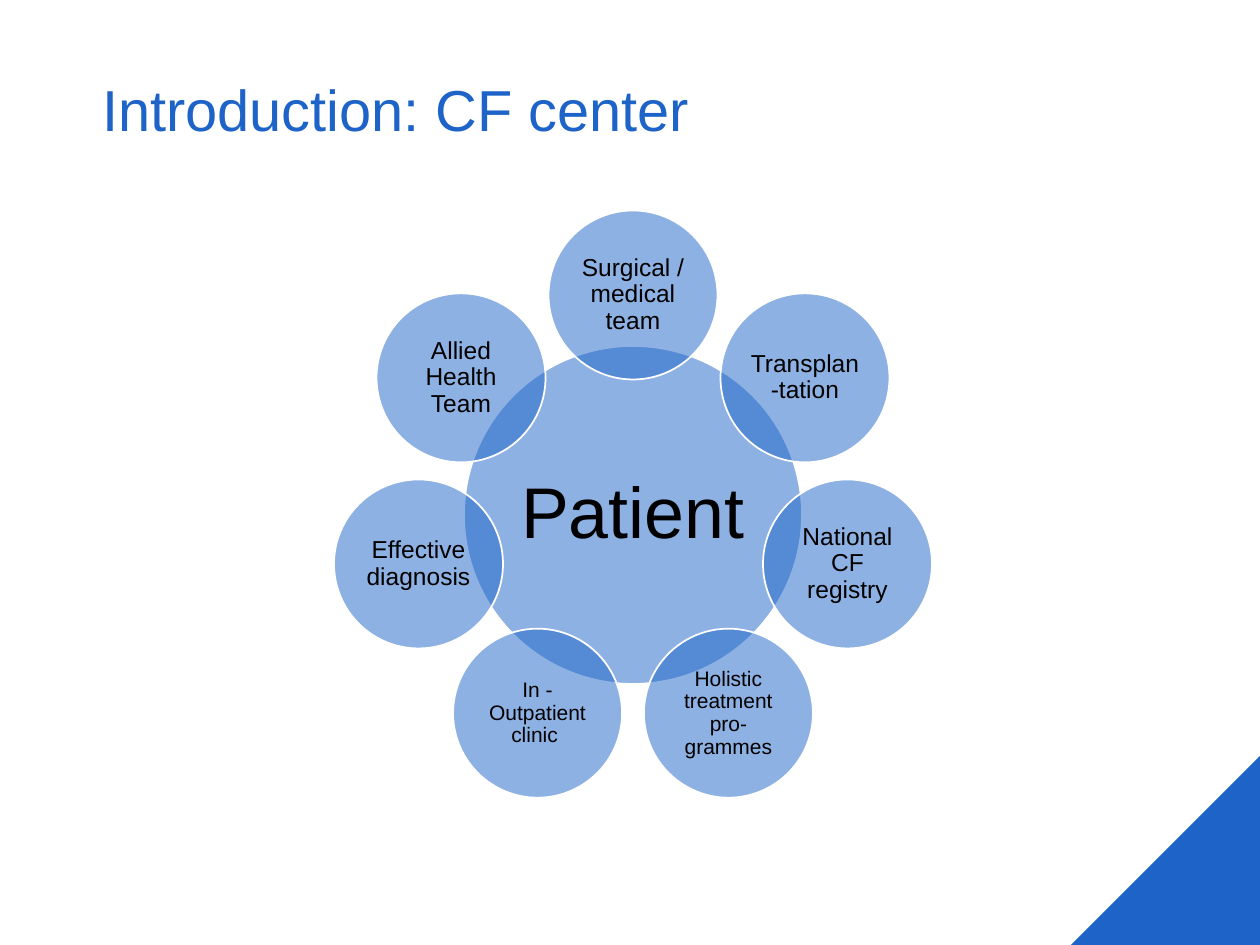
"""Build the CF center slide: a patient circle ringed by seven care circles."""
import math
from dataclasses import dataclass

from lxml import etree
from pptx import Presentation
from pptx import util as u
from pptx.dml.color import RGBColor
from pptx.enum import shapes, text
from pptx.oxml.ns import qn

BLUE = RGBColor(0x1E, 0x64, 0xC8)
WHITE = RGBColor(0xFF, 0xFF, 0xFF)
BLACK = RGBColor(0x00, 0x00, 0x00)
FONT = "Arial"
PX_PER_INCH = 126
SLIDE_WIDTH, SLIDE_HEIGHT = 1260, 945
CORNER_SIZE = 189
CENTER_X, CENTER_Y = 633, 515
ORBIT_RADIUS = 220
HUB_DIAMETER, CARE_DIAMETER = 338, 169
LABEL_INSET = 3


@dataclass(frozen=True)
class Circle:
    label: str
    size: int = 14
    diameter: int = CARE_DIAMETER


PATIENT = Circle("Patient", 41, HUB_DIAMETER)
CARE_CIRCLES = [
    Circle("Surgical / medical team"),
    Circle("Transplan-tation"),
    Circle("National CF registry"),
    Circle("Holistic treatment pro-grammes", 12),
    Circle("In - Outpatient clinic ", 12),
    Circle("Effective diagnosis"),
    Circle("Allied Health Team"),
]


def px(length: float) -> u.Emu:
    return u.Emu(round(length * u.Inches(1) / PX_PER_INCH))


def write(frame, wording: str, size: int, color: RGBColor, align) -> None:
    frame.word_wrap = True
    frame.vertical_anchor = text.MSO_ANCHOR.MIDDLE
    paragraph = frame.paragraphs[0]
    paragraph.text = wording
    paragraph.alignment = align
    paragraph.line_spacing = 0.9
    paragraph.font.name = FONT
    paragraph.font.size = u.Pt(size)
    paragraph.font.color.rgb = color


def add_circle(slide, circle: Circle, center_x: float, center_y: float) -> None:
    radius = circle.diameter / 2
    disc = slide.shapes.add_shape(
        shapes.MSO_SHAPE.OVAL, px(center_x - radius), px(center_y - radius),
        px(circle.diameter), px(circle.diameter))
    disc.shadow.inherit = False
    disc.fill.solid()
    disc.fill.fore_color.rgb = BLUE
    tint = disc.element.spPr.find(qn("a:solidFill")).find(qn("a:srgbClr"))
    etree.SubElement(tint, qn("a:alpha"), val="50000")
    disc.line.color.rgb = WHITE
    disc.line.width = u.Pt(1)
    frame = disc.text_frame
    frame.margin_left = frame.margin_right = px(LABEL_INSET)
    frame.margin_top = frame.margin_bottom = px(LABEL_INSET)
    write(frame, circle.label, circle.size, BLACK, text.PP_ALIGN.CENTER)


def add_corner(slide) -> None:
    corner = slide.shapes.add_shape(
        shapes.MSO_SHAPE.RIGHT_TRIANGLE, px(SLIDE_WIDTH - CORNER_SIZE),
        px(SLIDE_HEIGHT - CORNER_SIZE), px(CORNER_SIZE), px(CORNER_SIZE))
    corner.rotation = 270
    corner.shadow.inherit = False
    corner.fill.solid()
    corner.fill.fore_color.rgb = BLUE
    corner.line.fill.background()


def main() -> None:
    deck = Presentation()
    deck.slide_width, deck.slide_height = px(SLIDE_WIDTH), px(SLIDE_HEIGHT)
    slide = deck.slides.add_slide(deck.slide_layouts[6])
    add_corner(slide)
    title = slide.shapes.add_textbox(px(90), px(21), px(1086), px(183))
    write(title.text_frame, "Introduction: CF center", 33, BLUE, text.PP_ALIGN.LEFT)
    add_circle(slide, PATIENT, CENTER_X, CENTER_Y)
    for index, circle in enumerate(CARE_CIRCLES):
        angle = math.tau * index / len(CARE_CIRCLES)
        add_circle(slide, circle,
                   CENTER_X + ORBIT_RADIUS * math.sin(angle),
                   CENTER_Y - ORBIT_RADIUS * math.cos(angle))
    deck.save("out.pptx")


if __name__ == "__main__":
    main()
